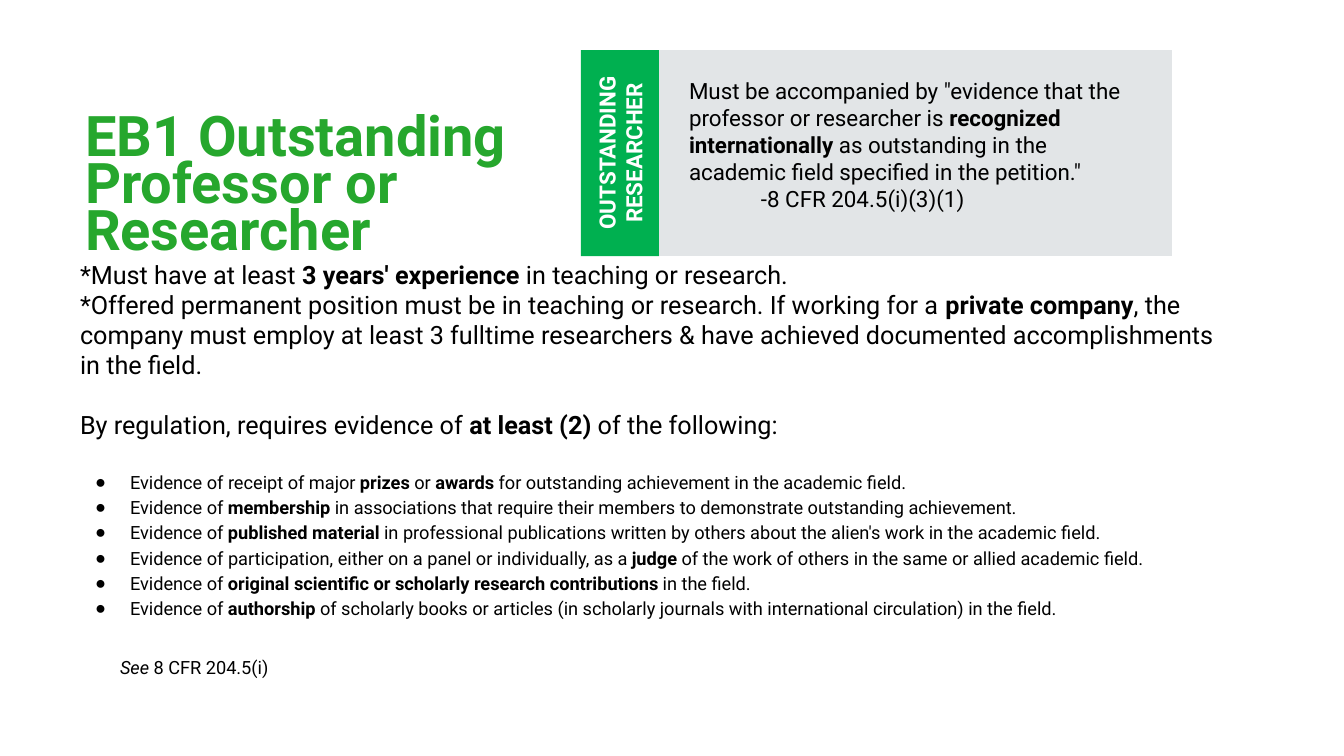
from lxml.etree import SubElement
from pptx import Presentation
from pptx.dml.color import RGBColor
from pptx.enum.shapes import MSO_SHAPE as Shape
from pptx.enum.text import MSO_ANCHOR as Anchor, MSO_AUTO_SIZE as AutoSize, PP_ALIGN as Align
from pptx.oxml.ns import qn
from pptx.util import Pt

HEADING = "EB1 Outstanding Professor or Researcher"
TAB_LABEL = "OUTSTANDING RESEARCHER"
QUOTE = ('Must be accompanied by "evidence that the professor or researcher is '
         '**recognized internationally** as outstanding in the academic field '
         'specified in the petition."')
QUOTE_SOURCE = "-8 CFR 204.5(i)(3)(1)"
REQUIREMENTS = [
    "*Must have at least **3 years' experience** in teaching or research.",
    "*Offered permanent position must be in teaching or research. If working for a "
    "**private company**, the company must employ at least 3 fulltime researchers & "
    "have achieved documented accomplishments in the field.",
]
EVIDENCE_INTRO = "By regulation, requires evidence of **at least (2)** of the following:"
EVIDENCE = [
    "Evidence of receipt of major **prizes** or **awards** for outstanding achievement "
    "in the academic field.",
    "Evidence of **membership** in associations that require their members to "
    "demonstrate outstanding achievement.",
    "Evidence of **published material** in professional publications written by others "
    "about the alien's work in the academic field.",
    "Evidence of participation, either on a panel or individually, as a **judge** of "
    "the work of others in the same or allied academic field.",
    "Evidence of **original scientific or scholarly research contributions** in the field.",
    "Evidence of **authorship** of scholarly books or articles (in scholarly journals "
    "with international circulation) in the field.",
]
CITATION = "**See** 8 CFR 204.5(i)"

COLORS = {"paper": "FFFFFF", "ink": "000000", "heading": "26A72D",
          "tab": "00B050", "quote": "DFE3E5"}
FONT = "Roboto"
EMU_PER_PX = 914400 / 100.8


def px(length):
    return round(length * EMU_PER_PX)


def color(name):
    return RGBColor.from_string(COLORS[name])


def place(shape, left, top, width, height):
    shape.left, shape.top = px(left), px(top)
    shape.width, shape.height = px(width), px(height)


def prepare(shape, insets, anchor):
    frame = shape.text_frame
    frame.word_wrap = True
    frame.auto_size = AutoSize.NONE
    frame.vertical_anchor = anchor
    (frame.margin_left, frame.margin_top,
     frame.margin_right, frame.margin_bottom) = map(px, insets)
    return frame


def write(frame, text, size, ink="ink", bold=None, emphasis="bold", align=Align.LEFT,
          before=0, spacing=1.0, margin=0, indent=0, bullet=None):
    first = frame.paragraphs[0]
    paragraph = first if not first.runs else frame.add_paragraph()
    props = paragraph._p.get_or_add_pPr()
    props.set("marL", str(px(margin)))
    props.set("indent", str(px(indent)))
    if bullet:
        bullet_color = SubElement(props, qn("a:buClr"))
        SubElement(bullet_color, qn("a:srgbClr")).set("val", COLORS[ink])
        SubElement(props, qn("a:buChar")).set("char", bullet)
    else:
        SubElement(props, qn("a:buNone"))
    paragraph.alignment = align
    paragraph.line_spacing = spacing
    paragraph.space_before = Pt(before)
    paragraph.space_after = Pt(0)
    font = paragraph.font
    font.name, font.size, font.bold = FONT, Pt(size), bold
    font.color.rgb = color(ink)
    for position, part in enumerate(text.split("**")):
        if part:
            run = paragraph.add_run()
            run.text = part
            if position % 2:
                setattr(run.font, emphasis, True)


def add_panel(slide, fill, box):
    panel = slide.shapes.add_shape(Shape.RECTANGLE, 0, 0, 0, 0)
    place(panel, *box)
    panel.shadow.inherit = False
    panel.fill.solid()
    panel.fill.fore_color.rgb = color(fill)
    panel.line.fill.background()
    return panel


def main():
    deck = Presentation()
    deck.slide_width, deck.slide_height = px(1344), px(756)
    slide = deck.slides.add_slide(deck.slide_layouts[1])
    slide.background.fill.solid()
    slide.background.fill.fore_color.rgb = color("paper")

    heading = slide.shapes.title
    place(heading, 85, 114, 486, 80)
    write(prepare(heading, (0, 5, 0, 0), Anchor.TOP), HEADING, 40,
          ink="heading", bold=True, spacing=0.7)

    criteria = slide.placeholders[1]
    place(criteria, 70, 254, 1156, 423)
    frame = prepare(criteria, (10, 5, 10, 5), Anchor.TOP)
    for requirement in REQUIREMENTS:
        write(frame, requirement, 18)
    write(frame, EVIDENCE_INTRO, 18, before=21)
    for number, item in enumerate(EVIDENCE):
        write(frame, item, 13, before=0 if number else 20.5, spacing=1.15,
              margin=50, indent=-35, bullet="●")
    write(frame, CITATION, 13, emphasis="italic", before=24, spacing=1.15, margin=40)

    tab_left, band_top, tab_width, band_height = 581, 50, 78, 206
    quote = add_panel(slide, "quote", (tab_left + tab_width, band_top, 513, band_height))
    fill_color = quote.fill._xPr.find(qn("a:solidFill"))[0]
    SubElement(fill_color, qn("a:alpha")).set("val", "90000")
    frame = prepare(quote, (30, 10, 30, 27), Anchor.MIDDLE)
    write(frame, QUOTE, 16)
    write(frame, QUOTE_SOURCE, 16, margin=72)

    shift = (band_height - tab_width) // 2
    tab = add_panel(slide, "tab", (tab_left - shift, band_top + shift, band_height, tab_width))
    tab.rotation = 270
    write(prepare(tab, (0, 0, 0, 0), Anchor.MIDDLE), TAB_LABEL, 16,
          ink="paper", bold=True, align=Align.CENTER)

    deck.save("out.pptx")


if __name__ == "__main__":
    main()
